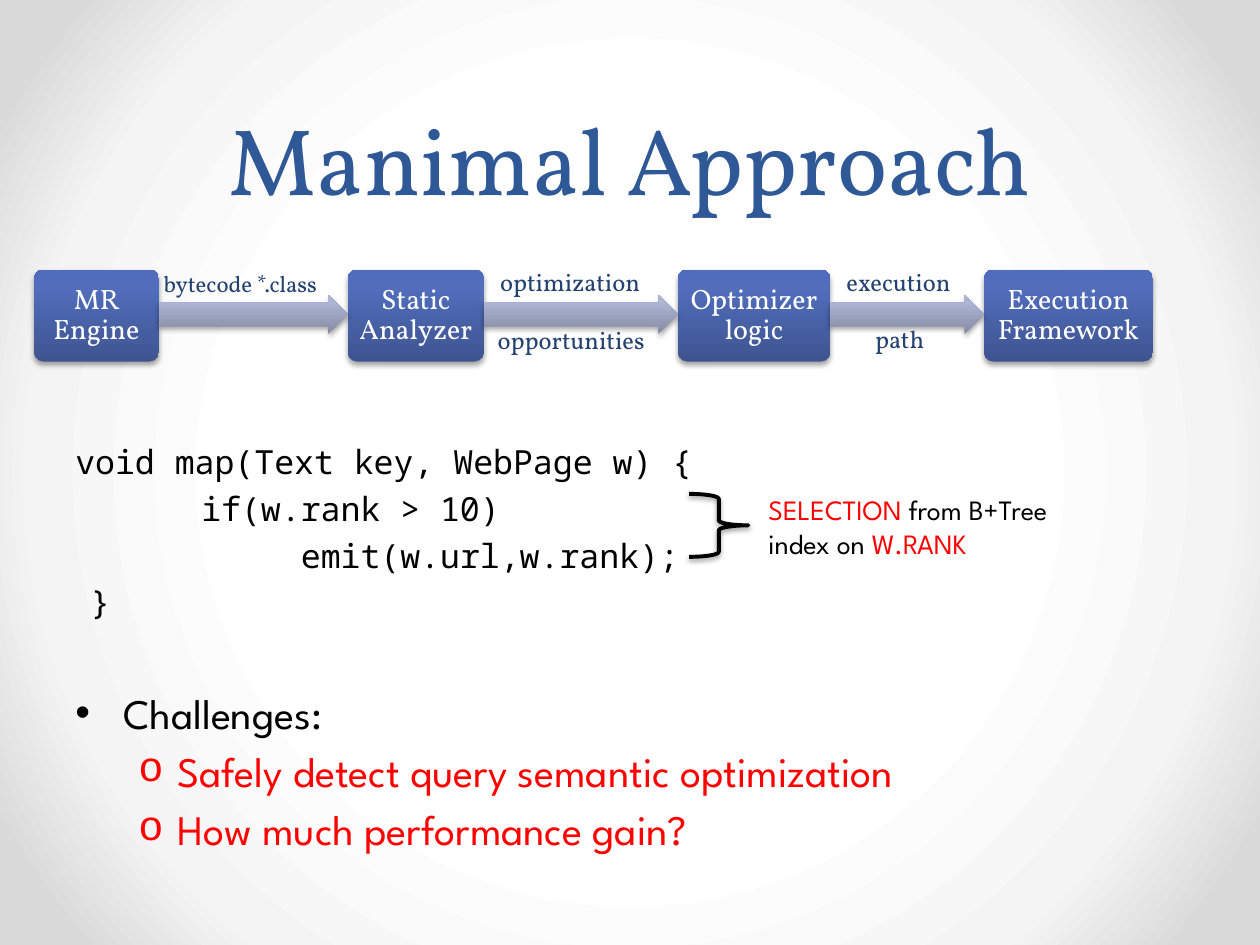
from pptx import Presentation
from pptx.dml.color import RGBColor
from pptx.enum.shapes import MSO_SHAPE as SHAPE
from pptx.enum.text import MSO_ANCHOR as ANCHOR, PP_ALIGN as ALIGN
from pptx.oxml import parse_xml
from pptx.oxml.ns import nsdecls, qn
from pptx.util import Inches, Pt

SERIF, SANS, MONO = "Vollkorn", "League Spartan", "Noto Sans Mono"
BLACK, RED, WHITE, NAVY, BLUE = "000000", "FF0000", "FFFFFF", "234271", "2F5897"

# Content: stages (text, left, width), labels (text, place, size, alignment)
TITLE = "Manimal Approach"
STAGES = [("MR Engine", 0.27, 0.99), ("Static Analyzer", 2.76, 1.08),
          ("Optimizer logic", 5.38, 1.21), ("Execution Framework", 7.81, 1.34)]
LABELS = [("bytecode *.class", (1.2, 2.09, 1.47, 0.32), 13, ALIGN.LEFT),
          ("optimization", (3.87, 2.07, 1.42, 0.34), 14, ALIGN.LEFT),
          ("opportunities", (3.85, 2.53, 1.42, 0.34), 14, ALIGN.LEFT),
          ("execution", (6.62, 2.07, 1.04, 0.34), 14, ALIGN.LEFT),
          ("path", (6.62, 2.52, 1.04, 0.34), 14, ALIGN.CENTER)]
# Paragraphs: text, left margin, first-line indent, bullet, colour
CODE = [("void map(Text key, WebPage w) {", 0, 0, None, BLACK),
        ("if(w.rank > 10)", 1, 0, None, BLACK),
        ("emit(w.url,w.rank);", 1.79, 0, None, BLACK),
        ("}", 0.12, 0, None, BLACK)]
CHALLENGES = [("Challenges:", 0.38, -0.38, "•", BLACK),
              ("Safely detect query semantic optimization", 0.81, -0.31, "o", RED),
              ("How much performance gain?", 0.81, -0.31, "o", RED)]
NOTE = [("SELECTION", RED), (" from B+Tree index on ", BLACK), ("W.RANK", RED)]

STAGE_FILL = [(0, "3E5490"), (80, "516DBB"), (100, "4F6CBE")]
ARROW_FILL = [(0, "858BA3"), (80, "ADB4D4"), (100, "ADB5D6")]
PAGE_FILL = [(50, "FFFFFF"), (76, "F4F4F4"), (92, "DADADA")]
UPWARD = '<a:lin ang="16200000" scaled="0"/>'
RADIAL = ('<a:path path="circle"><a:fillToRect l="50000" t="50000" '
          'r="50000" b="50000"/></a:path>')


def color(code):
    return RGBColor.from_string(code)


def gradient(stops, direction):
    marks = "".join(f'<a:gs pos="{pos * 1000}"><a:srgbClr val="{code}"/></a:gs>'
                    for pos, code in stops)
    return parse_xml(f'<a:gradFill {nsdecls("a")} rotWithShape="1">'
                     f'<a:gsLst>{marks}</a:gsLst>{direction}</a:gradFill>')


def add_shadow(shape, alpha, distance):
    shape.shadow.inherit = False
    effects = shape.element.spPr.find(qn("a:effectLst"))
    effects.append(parse_xml(
        f'<a:outerShdw {nsdecls("a")} blurRad="{Pt(3.1)}" dist="{Pt(distance)}" '
        f'dir="5400000" rotWithShape="0"><a:srgbClr val="{BLACK}">'
        f'<a:alpha val="{alpha * 1000}"/></a:srgbClr></a:outerShdw>'))


def write(para, text, font=SERIF, size=14, ink=NAVY, align=ALIGN.LEFT, spacing=None):
    para.alignment = align
    if spacing:
        para.line_spacing = spacing
    span = para.add_run()
    span.text = text
    span.font.name, span.font.size = font, Pt(size)
    span.font.color.rgb = color(ink)


def add_box(page, place, anchor=ANCHOR.TOP):
    frame = page.shapes.add_textbox(*map(Inches, place)).text_frame
    frame.word_wrap = True
    frame.vertical_anchor = anchor
    return frame


def add_lines(page, place, lines, font, size, spacing):
    frame = add_box(page, place)
    for index, (text, margin, indent, bullet, ink) in enumerate(lines):
        para = frame.add_paragraph() if index else frame.paragraphs[0]
        write(para, text, font=font, size=size, ink=ink, spacing=Pt(spacing))
        props = para._p.get_or_add_pPr()
        props.set("marL", str(Inches(margin)))
        props.set("indent", str(Inches(indent)))
        if bullet:
            face = "Arial" if bullet == "•" else "Courier New"
            props.append(parse_xml(f'<a:buFont {nsdecls("a")} typeface="{face}"/>'))
            props.append(parse_xml(f'<a:buChar {nsdecls("a")} char="{bullet}"/>'))


def add_block(page, kind, place, stops, adjustment):
    shape = page.shapes.add_shape(kind, *map(Inches, place))
    shape.adjustments[0] = adjustment
    shape.element.spPr.append(gradient(stops, UPWARD))
    shape.line.fill.background()
    add_shadow(shape, 35, 1.8)
    return shape


def main():
    deck = Presentation()
    deck.slide_width, deck.slide_height = Inches(10), Inches(7.5)
    page = deck.slides.add_slide(deck.slide_layouts[6])

    # Background
    page.background.fill.solid()
    backdrop = page.element.find(".//" + qn("p:bgPr"))
    backdrop.replace(backdrop[0], gradient(PAGE_FILL, RADIAL))

    # Title
    frame = add_box(page, (0.5, 0, 9, 1.75), ANCHOR.BOTTOM)
    write(frame.paragraphs[0], TITLE, size=54, ink=BLUE, align=ALIGN.CENTER,
          spacing=Pt(58))

    # Pipeline stages
    for text, left, width in STAGES:
        stage = add_block(page, SHAPE.ROUNDED_RECTANGLE, (left, 2.14, width, 0.73),
                          STAGE_FILL, 0.1)
        frame = stage.text_frame
        frame.word_wrap = True
        frame.vertical_anchor = ANCHOR.MIDDLE
        frame.margin_left = frame.margin_right = Inches(0.05)
        write(frame.paragraphs[0], text, size=16, ink=WHITE, align=ALIGN.CENTER,
              spacing=0.9)

    # Arrows fill the gaps between stages
    for (_, left, width), (_, following, _) in zip(STAGES, STAGES[1:]):
        start = left + width
        add_block(page, SHAPE.RIGHT_ARROW, (start, 2.34, following - start, 0.31),
                  ARROW_FILL, 0.6)

    # Arrow labels
    for text, place, size, align in LABELS:
        write(add_box(page, place).paragraphs[0], text, size=size, align=align)

    # Code and challenges
    add_lines(page, (0.5, 3.4, 9, 1.6), CODE, MONO, 19, 26.7)
    add_lines(page, (0.5, 5.34, 9, 1.5), CHALLENGES, SANS, 24, 33.4)

    # Brace and its note
    brace = page.shapes.add_shape(SHAPE.RIGHT_BRACE, *map(Inches, (5.47, 3.92, 0.47, 0.5)))
    brace.fill.background()
    brace.line.color.rgb = color(BLACK)
    brace.line.width = Pt(2.25)
    add_shadow(brace, 38, 1.6)
    note = add_box(page, (6, 3.86, 2.89, 0.64)).paragraphs[0]
    for text, ink in NOTE:
        write(note, text, font=SANS, size=16, ink=ink)

    deck.save("out.pptx")


if __name__ == "__main__":
    main()
